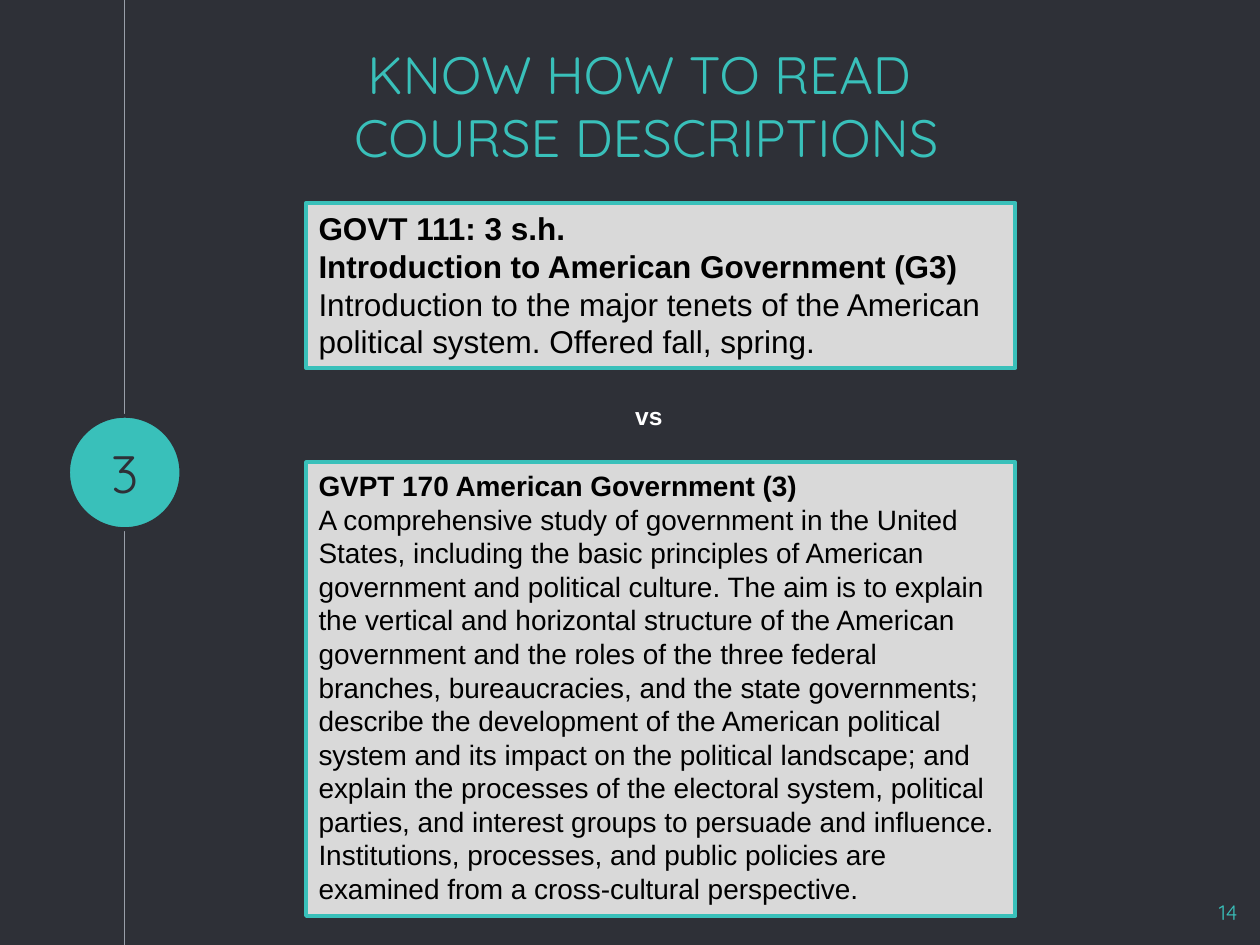
from lxml import etree
from pptx import Presentation
from pptx.dml.color import RGBColor
from pptx.enum.shapes import MSO_CONNECTOR, MSO_SHAPE
from pptx.enum.text import MSO_ANCHOR, MSO_AUTO_SIZE, PP_ALIGN
from pptx.oxml.ns import qn
from pptx.util import Inches, Pt

DARK = RGBColor(0x2E, 0x30, 0x37)
TEAL = RGBColor(0x39, 0xC0, 0xBA)
RULE_GREY = RGBColor(0x99, 0x9F, 0xA9)
PANEL_GREY = RGBColor(0xD9, 0xD9, 0xD9)
BLACK = RGBColor(0x00, 0x00, 0x00)
WHITE = RGBColor(0xFF, 0xFF, 0xFF)
LEFT, CENTER, RIGHT = PP_ALIGN.LEFT, PP_ALIGN.CENTER, PP_ALIGN.RIGHT
TOP, MIDDLE = MSO_ANCHOR.TOP, MSO_ANCHOR.MIDDLE
RECTANGLE, OVAL = MSO_SHAPE.RECTANGLE, MSO_SHAPE.OVAL
STRAIGHT, NO_FIT = MSO_CONNECTOR.STRAIGHT, MSO_AUTO_SIZE.NONE

# The page is a grid of 100 columns by 75 rows
deck = Presentation()
deck.slide_width, deck.slide_height = Inches(10), Inches(7.5)
COLUMN, ROW = deck.slide_width / 100, deck.slide_height / 75


def area(left, top, width, height):
    """Turn grid columns and rows into slide lengths."""
    return (round(left * COLUMN), round(top * ROW),
            round(width * COLUMN), round(height * ROW))


def write(box, *lines, size, color, font="Quicksand", align=CENTER,
          anchor=TOP, bold_lines=0, inset=0.1):
    """Fill a box with one paragraph per line; the first bold_lines are bold."""
    frame = box.text_frame
    frame.word_wrap = True
    frame.auto_size = NO_FIT
    frame.vertical_anchor = anchor
    frame.margin_left = frame.margin_right = Inches(0.1)
    frame.margin_top = frame.margin_bottom = Inches(inset)
    for index, line in enumerate(lines):
        para = frame.add_paragraph() if index else frame.paragraphs[0]
        para.text = line
        para.alignment = align
        for span in para.runs:
            span.font.name = font
            span.font.size = Pt(size)
            span.font.color.rgb = color
            span.font.bold = index < bold_lines


page = deck.slides.add_slide(deck.slide_layouts[5])
page.background.fill.solid()
page.background.fill.fore_color.rgb = DARK

# Vertical rule with the numbered circle
rule_x = round(9.9 * COLUMN)
rule = page.shapes.add_connector(STRAIGHT, rule_x, 0, rule_x, deck.slide_height)
rule.line.color.rgb = RULE_GREY
rule.line.width = Pt(0.75)
etree.SubElement(rule._element.spPr, qn("a:effectLst"))

circle = page.shapes.add_shape(OVAL, *area(5.4, 33, 9, 9))
circle.shadow.inherit = False
circle.fill.solid()
circle.fill.fore_color.rgb = TEAL
circle.line.color.rgb = DARK
circle.line.width = Pt(2.25)

# Title
title = page.shapes.title
title.left, title.top, title.width, title.height = area(14.3, 4.4, 74, 7.8)
write(title, "KNOW HOW TO READ \vCOURSE DESCRIPTIONS",
      size=30, color=TEAL, anchor=MIDDLE)

# Step number and page number
step = page.shapes.add_textbox(*area(5.5, 33.2, 8.8, 8.6))
write(step, "3", size=30, color=DARK, anchor=MIDDLE)
page_number = page.shapes.add_textbox(*area(93.2, 70.4, 6, 4.6))
write(page_number, "14", size=12, color=TEAL, align=RIGHT)

# Two course descriptions: top row, height, text size, bold lines, wording
courses = [
    (16.1, 13.1, 18, 2, (
        "GOVT 111: 3 s.h.",
        "Introduction to American Government (G3)",
        "Introduction to the major tenets of the American political system. "
        "Offered fall, spring.")),
    (36.7, 36, 16, 1, (
        "GVPT 170 American Government (3)",
        "A comprehensive study of government in the United States, including "
        "the basic principles of American government and political culture. "
        "The aim is to explain the vertical and horizontal structure of the "
        "American government and the roles of the three federal branches, "
        "bureaucracies, and the state governments; describe the development "
        "of the American political system and its impact on the political "
        "landscape; and explain the processes of the electoral system, "
        "political parties, and interest groups to persuade and influence. "
        "Institutions, processes, and public policies are examined from a "
        "cross-cultural perspective.")),
]
for top, height, size, bold_lines, lines in courses:
    panel = page.shapes.add_shape(RECTANGLE, *area(24.3, top, 56.3, height))
    panel.shadow.inherit = False
    panel.fill.solid()
    panel.fill.fore_color.rgb = PANEL_GREY
    panel.line.color.rgb = TEAL
    panel.line.width = Pt(2.25)
    write(panel, *lines, size=size, color=BLACK, font="Arial", align=LEFT,
          bold_lines=bold_lines, inset=0.05)

# Word between the panels
versus = page.shapes.add_textbox(*area(47.7, 31.3, 7.6, 3.4))
write(versus, "vs", size=14, color=WHITE, font="Arial", bold_lines=1, inset=0.05)

deck.save("out.pptx")
